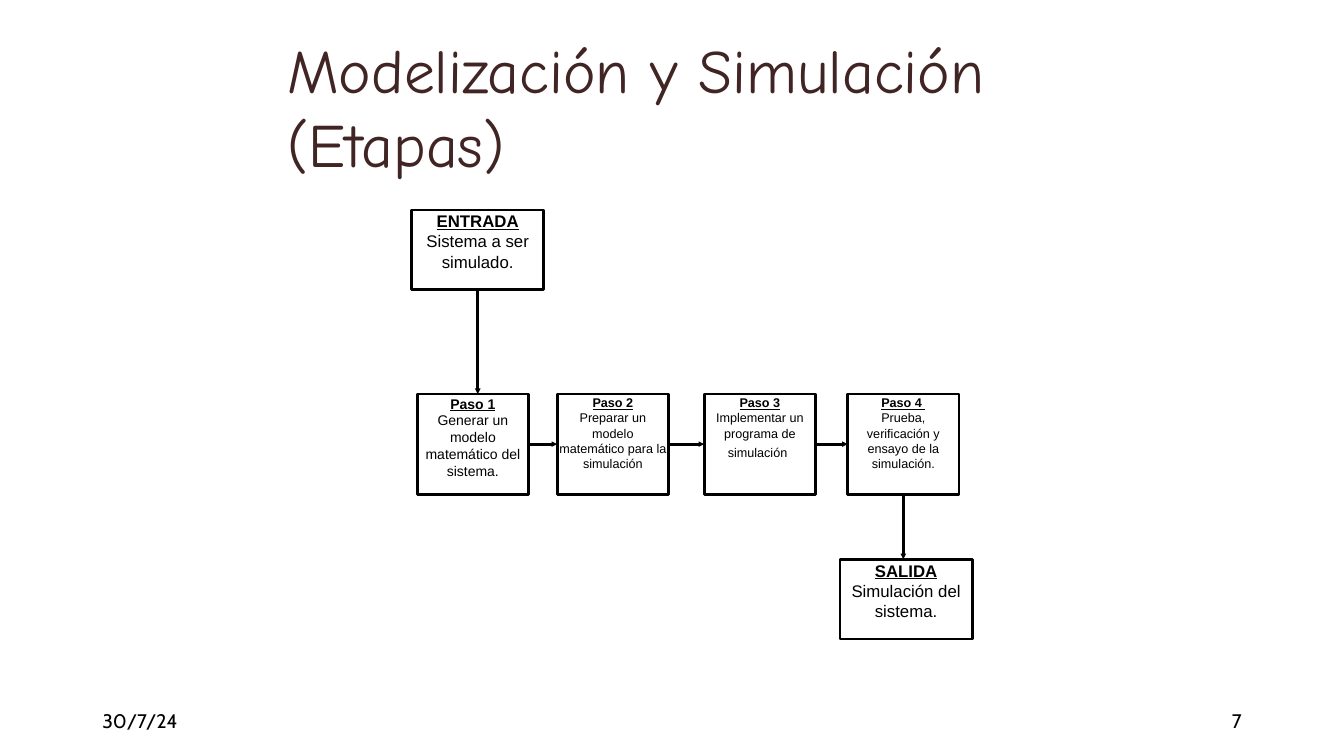
"""Build the slide on the stages of modelling and simulation."""
from dataclasses import dataclass

from lxml import etree
from pptx import Presentation
from pptx import util as u
from pptx.dml.color import RGBColor
from pptx.enum import shapes, text
from pptx.oxml.ns import qn


@dataclass(frozen=True)
class Theme:
    ink: str = "000000"
    heading: str = "412524"
    title_font: str = "Comic Neue"
    body_font: str = "Arial"
    footer_font: str = "Cabin"
    title_size: int = 44
    footer_size: int = 14
    end_size: int = 12
    line_width: int = 2


THEME = Theme()
TITLE = "Modelización y Simulación (Etapas)"
STEP_TOP = 281.5
STEP_SIZE = (79.5, 71.5)
END_SIZE = (94.5, 57)
INPUT = ("ENTRADA", "Sistema a ser simulado.", 294, 150)
OUTPUT = ("SALIDA", "Simulación del sistema.", 600, 399.5)
STEPS = [
    ("Paso 1", "Generar un modelo matemático del sistema.", 298, 10),
    ("Paso 2", "Preparar un modelo matemático para la simulación", 398, 9),
    ("Paso 3", "Implementar un programa de simulación", 503, 9),
    ("Paso 4 ", "Prueba, verificación y ensayo de la simulación.", 605.5, 9),
]
FOOTERS = [
    ("30/7/24", 66, text.PP_ALIGN.LEFT),
    ("7", 678, text.PP_ALIGN.RIGHT),
]
TOP, LEFT, BOTTOM, RIGHT = range(4)


def write(para, words, font=THEME.body_font, size=THEME.end_size,
          color=THEME.ink, bold=False, underline=False, align=None):
    para.alignment = align
    span = para.add_run()
    span.text = words
    span.font.name = font
    span.font.size = u.Pt(size)
    span.font.bold = bold
    span.font.underline = underline
    span.font.color.rgb = RGBColor.from_string(color)


def place(shape, left, top, width, height):
    shape.left, shape.top = u.Pt(left), u.Pt(top)
    shape.width, shape.height = u.Pt(width), u.Pt(height)


def style_line(line):
    line.color.rgb = RGBColor.from_string(THEME.ink)
    line.width = u.Pt(THEME.line_width)


def add_stage(page, name, detail, left, top, size, font_size):
    box = page.shapes.add_shape(shapes.MSO_SHAPE.RECTANGLE,
                                *map(u.Pt, (left, top, *size)))
    box.shadow.inherit = False
    box.fill.background()
    style_line(box.line)
    frame = box.text_frame
    frame.word_wrap = True
    frame.vertical_anchor = text.MSO_ANCHOR.TOP
    frame.margin_left = frame.margin_right = u.Pt(0.72)
    frame.margin_top = frame.margin_bottom = u.Pt(0.72)
    center = text.PP_ALIGN.CENTER
    write(frame.paragraphs[0], name, size=font_size, bold=True,
          underline=True, align=center)
    write(frame.add_paragraph(), detail, size=font_size, align=center)
    return box


def add_arrow(page, source, source_side, target, target_side):
    middle = source.left + source.width // 2
    arrow = page.shapes.add_connector(shapes.MSO_CONNECTOR.STRAIGHT,
                                      middle, source.top + source.height,
                                      middle, target.top)
    arrow.begin_connect(source, source_side)
    if target_side != TOP:
        arrow.end_connect(target, target_side)
    style_line(arrow.line)
    etree.SubElement(arrow.line._get_or_add_ln(), qn("a:tailEnd"),
                     type="triangle", w="sm", len="sm")
    etree.SubElement(arrow._element.spPr, qn("a:effectLst"))


def main():
    deck = Presentation()
    deck.slide_width, deck.slide_height = u.Pt(960), u.Pt(540)
    page = deck.slides.add_slide(deck.slide_layouts[5])

    title = page.shapes.title
    place(title, 198, 42, 612, 90)
    title.text_frame.word_wrap = True
    title.text_frame.auto_size = text.MSO_AUTO_SIZE.NONE
    title.text_frame.vertical_anchor = text.MSO_ANCHOR.BOTTOM
    write(title.text_frame.paragraphs[0], TITLE, font=THEME.title_font,
          size=THEME.title_size, color=THEME.heading,
          align=text.PP_ALIGN.LEFT)

    start = add_stage(page, *INPUT, END_SIZE, THEME.end_size)
    steps = [add_stage(page, name, detail, left, STEP_TOP, STEP_SIZE, size)
             for name, detail, left, size in STEPS]
    write(steps[2].text_frame.paragraphs[1], " ", align=text.PP_ALIGN.CENTER)
    finish = add_stage(page, *OUTPUT, END_SIZE, THEME.end_size)

    add_arrow(page, start, BOTTOM, steps[0], TOP)
    for source, target in zip(steps, steps[1:]):
        add_arrow(page, source, RIGHT, target, LEFT)
    add_arrow(page, steps[-1], BOTTOM, finish, TOP)

    for words, left, align in FOOTERS:
        box = page.shapes.add_textbox(*map(u.Pt, (left, 500.5, 216, 28.5)))
        box.text_frame.word_wrap = True
        box.text_frame.vertical_anchor = text.MSO_ANCHOR.MIDDLE
        write(box.text_frame.paragraphs[0], words, font=THEME.footer_font,
              size=THEME.footer_size, align=align)

    deck.save("out.pptx")


if __name__ == "__main__":
    main()
